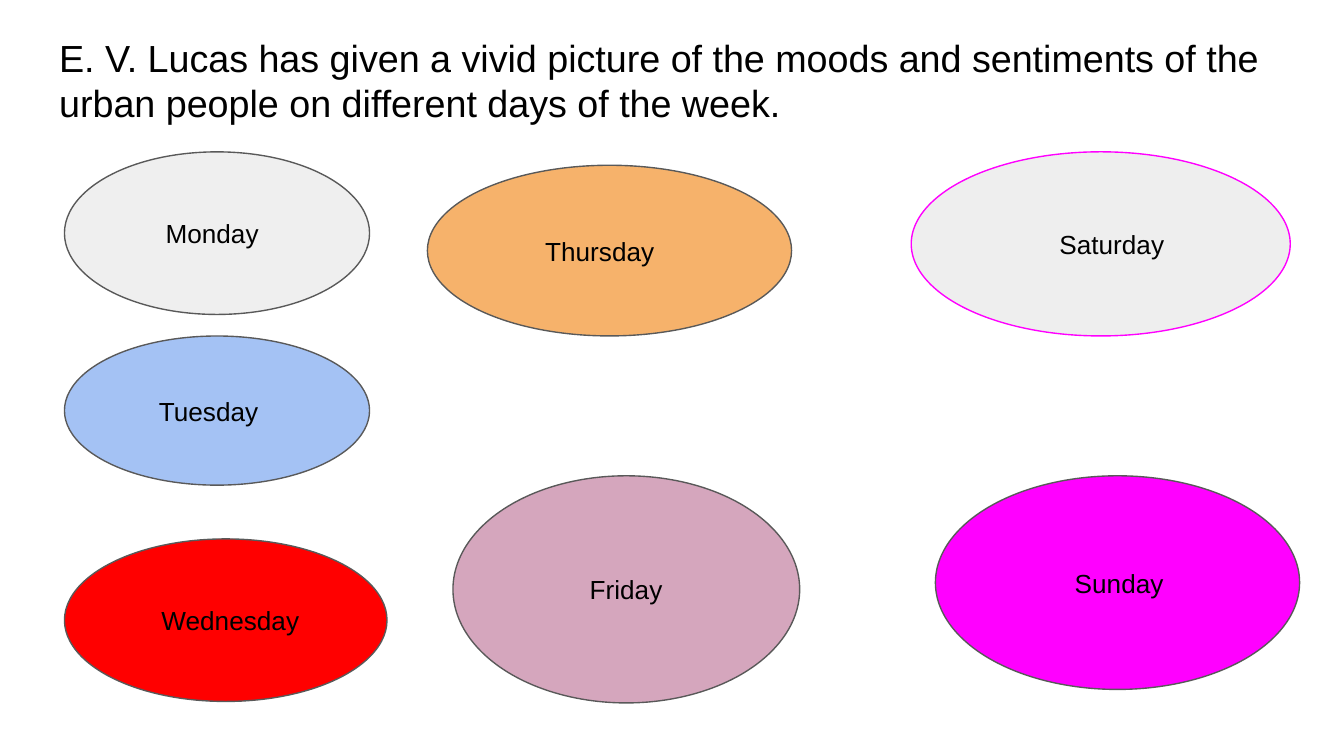
import pptx
import pptx.dml.color
import pptx.enum.shapes
import pptx.enum.text
import pptx.util

Inches = pptx.util.Inches
Pt = pptx.util.Pt

COLORS = {
    "text": "000000",
    "outline": "595959",
    "grey": "EFEFEF",
    "light grey": "EEEEEE",
    "blue": "A4C2F4",
    "red": "FF0000",
    "orange": "F6B26B",
    "mauve": "D5A6BD",
    "magenta": "FF00FF",
}

# Day, box (left, top, width, height), label indent, fill, outline
DAYS = [
    ("Monday", (0.48, 1.13, 2.27, 1.21), 0.32, "grey", "outline"),
    ("Tuesday", (0.48, 2.5, 2.27, 1.11), 0.27, "blue", "outline"),
    ("Wednesday", (0.48, 4.01, 2.4, 1.21), 0.27, "red", "outline"),
    ("Thursday", (3.18, 1.23, 2.71, 1.27), 0.38, "orange", "outline"),
    ("Friday", (3.37, 3.54, 2.58, 1.69), 0.54, "mauve", "outline"),
    ("Saturday", (6.78, 1.13, 2.82, 1.37), 0.59, "light grey", "magenta"),
    ("Sunday", (6.96, 3.54, 2.71, 1.59), 0.54, "magenta", "outline"),
]


def rgb(color):
    return pptx.dml.color.RGBColor.from_string(COLORS[color])


def set_text(shape, text, size, anchor, indent=0):
    """Write left-aligned text, indented from the usual 0.1 inch margin."""
    frame = shape.text_frame
    frame_format = {
        "text": text,
        "word_wrap": True,
        "auto_size": pptx.enum.text.MSO_AUTO_SIZE.NONE,
        "vertical_anchor": anchor,
        "margin_left": Inches(0.1 + indent),
        "margin_top": Inches(0.1),
        "margin_right": Inches(0.1),
        "margin_bottom": Inches(0.1),
    }
    for name, value in frame_format.items():
        setattr(frame, name, value)
    paragraph = frame.paragraphs[0]
    paragraph.alignment = pptx.enum.text.PP_ALIGN.LEFT
    font = paragraph.runs[0].font
    for name, value in {"name": "Arial", "size": Pt(size), "bold": False}.items():
        setattr(font, name, value)
    font.color.rgb = rgb("text")


def place_title(slide, box, text):
    title = slide.shapes.title
    for name, value in zip(("left", "top", "width", "height"), box):
        setattr(title, name, Inches(value))
    set_text(title, text, 20.2, pptx.enum.text.MSO_ANCHOR.TOP)


def place_day(slide, box, day, indent, fill, outline):
    bubble = slide.shapes.add_shape(
        pptx.enum.shapes.MSO_SHAPE.OVAL, *map(Inches, box))
    bubble.shadow.inherit = False
    bubble.fill.solid()
    bubble.fill.fore_color.rgb = rgb(fill)
    bubble.line.color.rgb = rgb(outline)
    bubble.line.width = Pt(0.75)
    set_text(bubble, day, 14, pptx.enum.text.MSO_ANCHOR.MIDDLE, indent)


def main():
    deck = pptx.Presentation()
    deck.slide_width = Inches(10)
    deck.slide_height = deck.slide_width * 9 // 16
    title_only = deck.slide_layouts[5]
    slide = deck.slides.add_slide(title_only)
    place_title(
        slide, (0.34, 0.16, 9.32, 0.88),
        "E. V. Lucas has given a vivid picture of the moods and sentiments "
        "of the urban people on different days of the week.")
    for day, box, indent, fill, outline in DAYS:
        place_day(slide, box, day, indent, fill, outline)
    deck.save("out.pptx")


if __name__ == "__main__":
    main()
